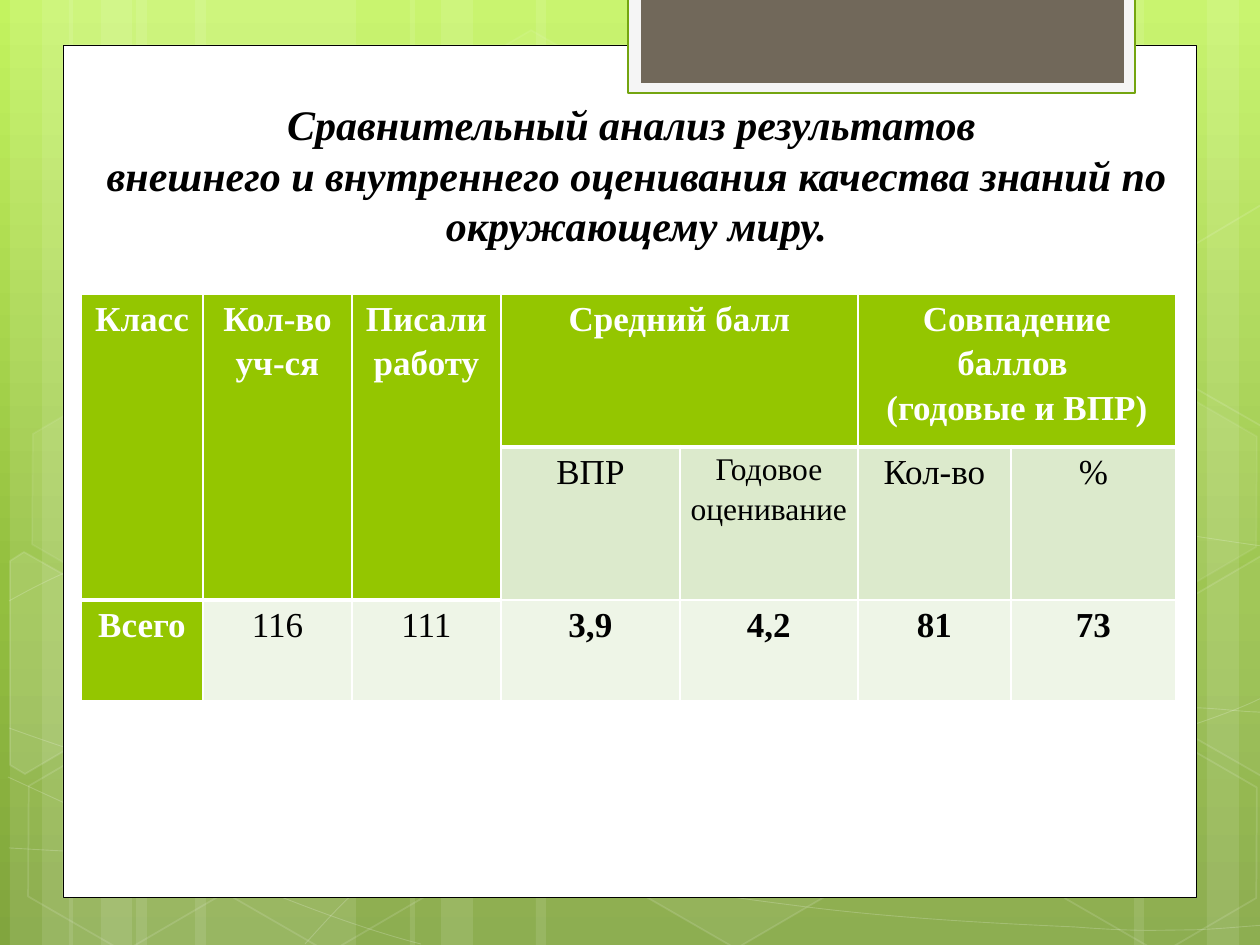
from copy import deepcopy

from lxml import etree
from pptx import Presentation
from pptx.dml.color import RGBColor
from pptx.enum.shapes import MSO_SHAPE
from pptx.enum.text import PP_ALIGN
from pptx.oxml.ns import qn
from pptx.util import Pt

PX = 914400 / 126
RECTANGLE, HEXAGON = MSO_SHAPE.RECTANGLE, MSO_SHAPE.HEXAGON
CENTER = PP_ALIGN.CENTER
FONT = "Times New Roman"
WHITE, BLACK, GREEN = "FFFFFF", "000000", "94C600"
PALE, PALER = "DCEACC", "EEF5E7"

BACKGROUND_STOPS = [(0, "C3F35F"), (0.62, "93BF3F"), (1, "81A53E")]
# left, width of each full-height band
STRIPES = [(136, 220), (10, 63), (42, 105), (195, 220), (69, 63), (101, 105),
           (924, 220), (1207, 63), (1134, 105), (536, 388), (410, 63), (441, 105)]
# start point, then two control points and an end point for each Bezier piece
CURVES = [
    [(9, 848), (77, 852), (145, 856), (239, 854), (334, 853), (451, 851), (577, 838),
     (703, 825), (882, 801), (998, 777), (1113, 753), (1231, 716), (1269, 694)],
    [(9, 601), (45, 581), (82, 562), (152, 543), (224, 524), (326, 496), (437, 488),
     (549, 479), (685, 478), (824, 488), (963, 498), (1193, 537), (1269, 547)],
    [(8, 777), (160, 847), (311, 916), (421, 944)],
    [(9, 728), (48, 742), (88, 756), (161, 776), (234, 795), (344, 827), (450, 848),
     (554, 869), (687, 892), (791, 905), (896, 919), (1008, 924), (1075, 927),
     (1140, 932), (1158, 930), (1191, 930), (1223, 929), (1246, 926), (1269, 925)],
    [(305, 944), (328, 919), (350, 893), (381, 871), (411, 848), (454, 823), (489, 805),
     (524, 788), (546, 780), (592, 767), (638, 754), (722, 737), (766, 728),
     (812, 719), (818, 719), (857, 717), (896, 713), (958, 709), (1000, 708),
     (1044, 707), (1116, 708), (1116, 708), (1145, 708), (1173, 708), (1201, 708),
     (1223, 709), (1245, 712), (1256, 712), (1268, 713), (1264, 712), (1268, 713)],
]
# left, top, fill opacity (None for no fill), line opacity
HEXAGONS = [(421, 45, 4, 8), (626, 742, 6, 12), (14, 745, None, 12), (18, 393, 7, 8),
            (219, 746, None, 12), (949, 571, 10, 12), (1051, 747, None, 12),
            (1051, 396, 7, 8)]
# hexagons cut by the slide edge: fill opacity, corners
CUT_HEXAGONS = [
    (10, [(10, 561), (24, 552), (121, 607), (120, 718), (25, 774), (10, 765)]),
    (4, [(1167, 611), (1261, 556), (1271, 562), (1271, 772), (1263, 777), (1167, 722)]),
    (None, [(1167, 261), (1261, 205), (1273, 212), (1271, 422), (1263, 427), (1167, 372)]),
]
# box, fill, line colour, line width
PANELS = [((63, 45, 1134, 853), WHITE, BLACK, 0.5),
          ((628, -3, 507, 96), "F5F5F5", "74A510", 1.25),
          ((641, -3, 483, 86), "71685A", None, 0)]

TITLE = ["Сравнительный анализ результатов ",
         "внешнего и внутреннего оценивания качества знаний по окружающему миру."]
COLUMNS = [122, 149, 149, 179, 178, 153, 165]
ROWS = [153, 153, 101]
MERGES = [(0, 0, 1, 0), (0, 1, 1, 1), (0, 2, 1, 2), (0, 3, 0, 4), (0, 5, 0, 6)]
TALL_HEADERS = 3
CELLS = [
    ["Класс", "Кол-во уч-ся", "Писали работу", "Средний балл", "",
     "Совпадение баллов \n(годовые и ВПР)", ""],
    ["", "", "", "ВПР", "Годовое оценивание", "Кол-во", "%"],
    ["Всего", "116", "111", "3,9", "4,2", "81", "73"],
]


def px(value):
    return round(value * PX)


def rgb(color):
    return RGBColor.from_string(color)


def paint(fill, color, opacity=100):
    """Solid fill, see-through when opacity is under 100; None clears the fill."""
    if color is None or opacity is None:
        fill.background()
        return
    fill.solid()
    fill.fore_color.rgb = rgb(color)
    if opacity < 100:
        color_element = fill._xPr.find(qn("a:solidFill"))[0]
        etree.SubElement(color_element, qn("a:alpha"), val=str(opacity * 1000))


def style(shape, fill, fill_opacity, line, line_width, line_opacity=100):
    shape.shadow.inherit = False
    paint(shape.fill, fill, fill_opacity)
    paint(shape.line.fill, line, line_opacity)
    if line:
        shape.line.width = Pt(line_width)


def add_box(shapes, preset, box):
    return shapes.add_shape(preset, *map(px, box))


def add_outline(shapes, points, close):
    start, *others = [(px(x), px(y)) for x, y in points]
    builder = shapes.build_freeform(*start)
    builder.add_line_segments(others, close=close)
    return builder.convert_to_shape()


def add_curve(shapes, points):
    """Open outline whose points are joined, three at a time, into Bezier pieces."""
    shape = add_outline(shapes, points, False)
    outline = shape._element.find(".//" + qn("a:path"))
    segments = outline.findall(qn("a:lnTo"))
    for first in range(0, len(segments), 3):
        piece = etree.SubElement(outline, qn("a:cubicBezTo"))
        for segment in segments[first:first + 3]:
            piece.append(segment[0])
            outline.remove(segment)
    return shape


def paint_background(slide):
    fill = slide.background.fill
    fill.gradient()
    fill.gradient_angle = 270
    stop_list = slide._element.find(".//" + qn("a:gsLst"))
    stop_list.insert(1, deepcopy(stop_list[0]))
    for stop, (position, color) in zip(fill.gradient_stops, BACKGROUND_STOPS):
        stop.position = position
        stop.color.rgb = rgb(color)


def add_decoration(shapes):
    for left, width in STRIPES:
        style(add_box(shapes, RECTANGLE, (left, 0, width, 945)), WHITE, 10, None, 0)
    for points in CURVES:
        style(add_curve(shapes, points), None, None, WHITE, 0.5, 20)
    for left, top, fill_opacity, line_opacity in HEXAGONS:
        hexagon = add_box(shapes, HEXAGON, (left, top, 220, 192))
        hexagon.adjustments[0] = 0.285
        hexagon.rotation = 30
        style(hexagon, WHITE, fill_opacity, WHITE, 1, line_opacity)
    for fill_opacity, corners in CUT_HEXAGONS:
        style(add_outline(shapes, corners, True), WHITE, fill_opacity, WHITE, 1, 12)
    for box, fill, line, width in PANELS:
        style(add_box(shapes, RECTANGLE, box), fill, 100, line, width)


def set_font(paragraph, size, color, bold, italic=False):
    paragraph.alignment = CENTER
    font = paragraph.font
    font.name, font.size, font.bold, font.italic = FONT, Pt(size), bold, italic
    font.color.rgb = rgb(color)


def add_title(shapes):
    frame = shapes.add_textbox(px(81), px(92.5), px(1111), px(165)).text_frame
    frame.word_wrap = True
    frame.text = "\n".join(TITLE)
    for paragraph in frame.paragraphs:
        set_font(paragraph, 24, BLACK, True, True)


def set_borders(cell, row, column):
    """White borders, thick along the lower edge of the header cells."""
    header_edge = 2 if column < TALL_HEADERS else 1
    widths = {"L": 1, "R": 1, "T": 3 if row == header_edge else 1,
              "B": 3 if row + 1 == header_edge else 1}
    properties = cell._tc.get_or_add_tcPr()
    for side, width in widths.items():
        line = etree.SubElement(properties, qn("a:ln" + side), w=str(Pt(width)))
        fill = etree.SubElement(line, qn("a:solidFill"))
        etree.SubElement(fill, qn("a:srgbClr"), val=WHITE)


def add_score_table(shapes):
    table = shapes.add_table(len(ROWS), len(COLUMNS), px(81), px(294),
                             px(sum(COLUMNS)), px(sum(ROWS))).table
    for column, width in zip(table.columns, COLUMNS):
        column.width = px(width)
    for row, height in zip(table.rows, ROWS):
        row.height = px(height)
    for top, left, bottom, right in MERGES:
        table.cell(top, left).merge(table.cell(bottom, right))
    for r, texts in enumerate(CELLS):
        for c, text in enumerate(texts):
            cell = table.cell(r, c)
            header = r == 0 or c == 0 or (r == 1 and c < TALL_HEADERS)
            set_borders(cell, r, c)
            paint(cell.fill, GREEN if header else PALE if r == 1 else PALER)
            if cell.is_spanned:
                continue
            cell.margin_left = cell.margin_right = px(9)
            cell.margin_top = cell.margin_bottom = 0
            cell.text = text
            for paragraph in cell.text_frame.paragraphs:
                set_font(paragraph, 18 if (r, c) == (1, 4) else 20,
                         WHITE if header else BLACK,
                         header or (r == 2 and c >= TALL_HEADERS))
                paragraph.line_spacing = 1.15


def main():
    presentation = Presentation()
    presentation.slide_width, presentation.slide_height = px(1260), px(945)
    slide = presentation.slides.add_slide(presentation.slide_layouts[6])
    paint_background(slide)
    add_decoration(slide.shapes)
    add_title(slide.shapes)
    add_score_table(slide.shapes)
    presentation.save("out.pptx")


if __name__ == "__main__":
    main()
